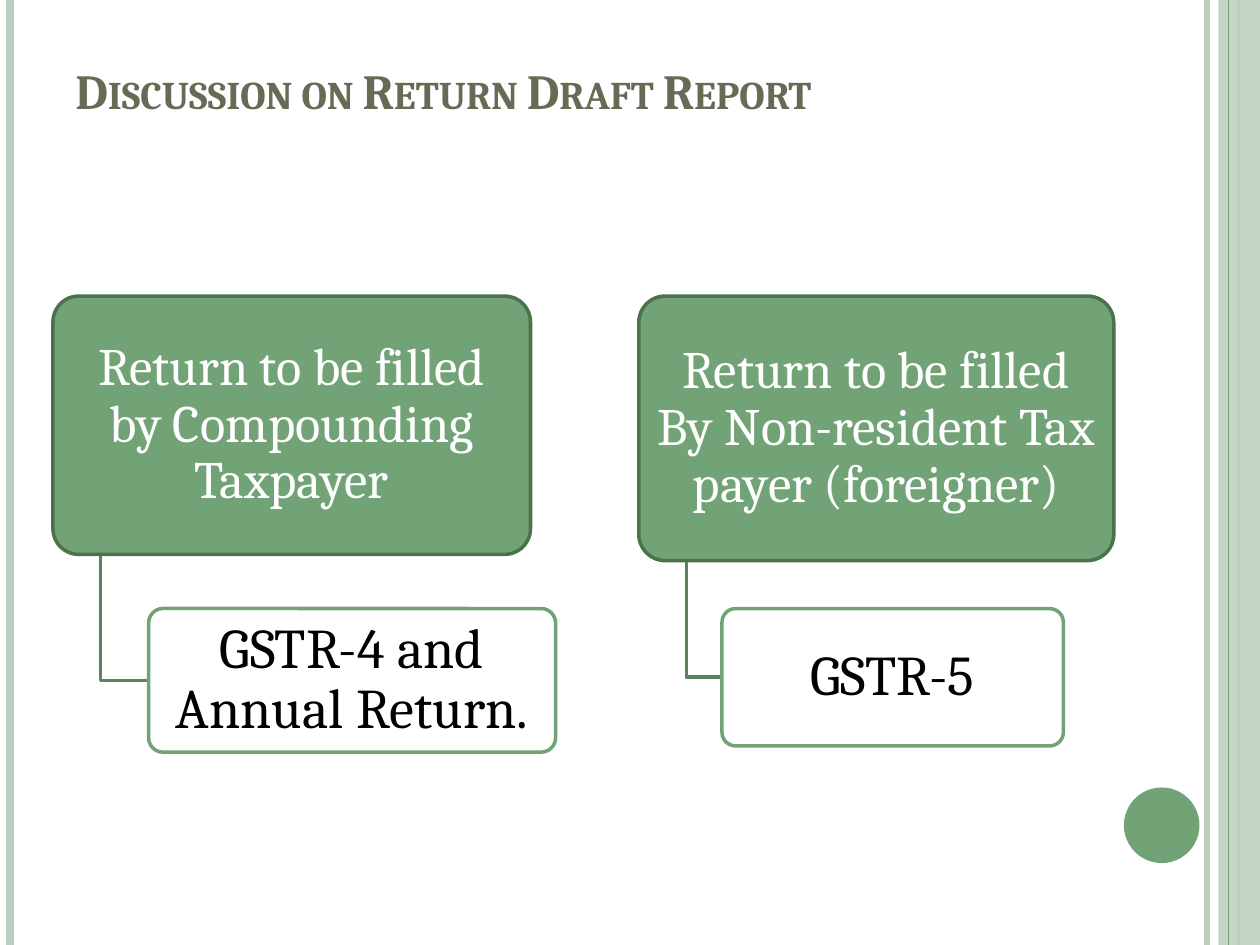
from lxml.etree import SubElement
from pptx import Presentation
from pptx.dml.color import RGBColor
from pptx.enum.shapes import MSO_CONNECTOR, MSO_SHAPE
from pptx.enum.text import MSO_ANCHOR, PP_ALIGN
from pptx.oxml import parse_xml
from pptx.oxml.ns import nsdecls, qn
from pptx.util import Inches, Pt

GREEN, PALE, DARK, ELBOW = "72A376", "BCCEBD", "4B734B", "5B835E"


def paint(sp, fill=None, line=None, width=2, alpha=100):
    """Set fill, its opacity in percent, and outline; None means no paint."""
    sp.shadow.inherit = False
    if fill:
        sp.fill.solid()
        sp.fill.fore_color.rgb = RGBColor.from_string(fill)
        if alpha < 100:
            color = sp.fill._xPr.find(qn("a:solidFill"))[0]
            SubElement(color, qn("a:alpha"), val=str(alpha * 1000))
    else:
        sp.fill.background()
    if line:
        sp.line.color.rgb = RGBColor.from_string(line)
        sp.line.width = Pt(width)
    else:
        sp.line.fill.background()


def write(sp, text, size, color, bold=False, align=PP_ALIGN.CENTER,
          anchor=MSO_ANCHOR.MIDDLE, margin=0.0, spacing=0.9):
    tf = sp.text_frame
    tf.word_wrap = True
    tf.vertical_anchor = anchor
    tf.margin_left = tf.margin_right = Inches(margin)
    tf.margin_top = tf.margin_bottom = Inches(margin / 2)
    p = tf.paragraphs[0]
    p.text = text
    p.alignment = align
    p.line_spacing = spacing
    for r in p.runs:
        r.font.name = "Cambria"
        r.font.size = Pt(size)
        r.font.bold = bold
        r.font.color.rgb = RGBColor.from_string(color)


prs = Presentation()
prs.slide_width, prs.slide_height = Inches(10), Inches(7.5)
slide = prs.slides.add_slide(prs.slide_layouts[6])
shapes = slide.shapes

# Side bands and corner dot
band = shapes.add_shape(MSO_SHAPE.RECTANGLE, Inches(9.67), 0,
                        Inches(0.33), prs.slide_height)
paint(band, PALE, alpha=87)
for x, color, width in [(9.58, PALE, 3), (0.08, PALE, 4.5),
                        (9.83, PALE, 1.5), (9.75, GREEN, 0.75)]:
    rule = shapes.add_connector(MSO_CONNECTOR.STRAIGHT, Inches(x), 0,
                                Inches(x), prs.slide_height)
    rule.line.color.rgb = RGBColor.from_string(color)
    rule.line.width = Pt(width)
    SubElement(rule._element.spPr, qn("a:effectLst"))
dot = shapes.add_shape(MSO_SHAPE.OVAL, Inches(8.92), Inches(6.25),
                       Inches(0.6), Inches(0.6))
paint(dot, GREEN)

# Title in small capitals with a soft shadow
title = shapes.add_textbox(Inches(0.5), Inches(0.42), Inches(8.17), Inches(0.58))
write(title, "Discussion on Return Draft Report", 28, "676A55", bold=True,
      align=PP_ALIGN.LEFT, anchor=MSO_ANCHOR.BOTTOM, margin=0.1, spacing=1.0)
rPr = title.text_frame.paragraphs[0].runs[0]._r.get_or_add_rPr()
rPr.set("cap", "small")
rPr.find(qn("a:solidFill")).addnext(parse_xml(
    f'<a:effectLst {nsdecls("a")}><a:outerShdw blurRad="38100" dist="38100" '
    'dir="2700000"><a:srgbClr val="000000"><a:alpha val="43000"/></a:srgbClr>'
    '</a:outerShdw></a:effectLst>'))

# Each taxpayer type with its return form: left, top, width, height
TOP, FORM_TOP = 2.35, 4.83
branches = [
    ("Return to be filled\vby Compounding Taxpayer", 0.42, 3.79, 2.05,
     "GSTR-4 and Annual Return.", 1.18, 3.23, 1.14),
    ("Return to be filled\vBy Non-resident Tax payer (foreigner)", 5.07, 3.77, 2.1,
     "GSTR-5", 5.73, 2.71, 1.09),
]
for payer, x, w, h, form, form_x, form_w, form_h in branches:
    stem_x = x + w / 10
    fb = shapes.build_freeform(Inches(stem_x), Inches(TOP + h))
    mid_y = Inches(FORM_TOP + form_h / 2)
    fb.add_line_segments([(Inches(stem_x), mid_y), (Inches(form_x), mid_y)],
                         close=False)
    paint(fb.convert_to_shape(), line=ELBOW)

    sp = shapes.add_shape(MSO_SHAPE.ROUNDED_RECTANGLE, Inches(x), Inches(TOP),
                          Inches(w), Inches(h))
    sp.adjustments[0] = 0.1
    paint(sp, GREEN, DARK)
    write(sp, payer, 30, "FFFFFF")

    sp = shapes.add_shape(MSO_SHAPE.ROUNDED_RECTANGLE, Inches(form_x),
                          Inches(FORM_TOP), Inches(form_w), Inches(form_h))
    sp.adjustments[0] = 0.1
    paint(sp, "FFFFFF", GREEN, alpha=90)
    write(sp, form, 32, "000000")

prs.save("out.pptx")
